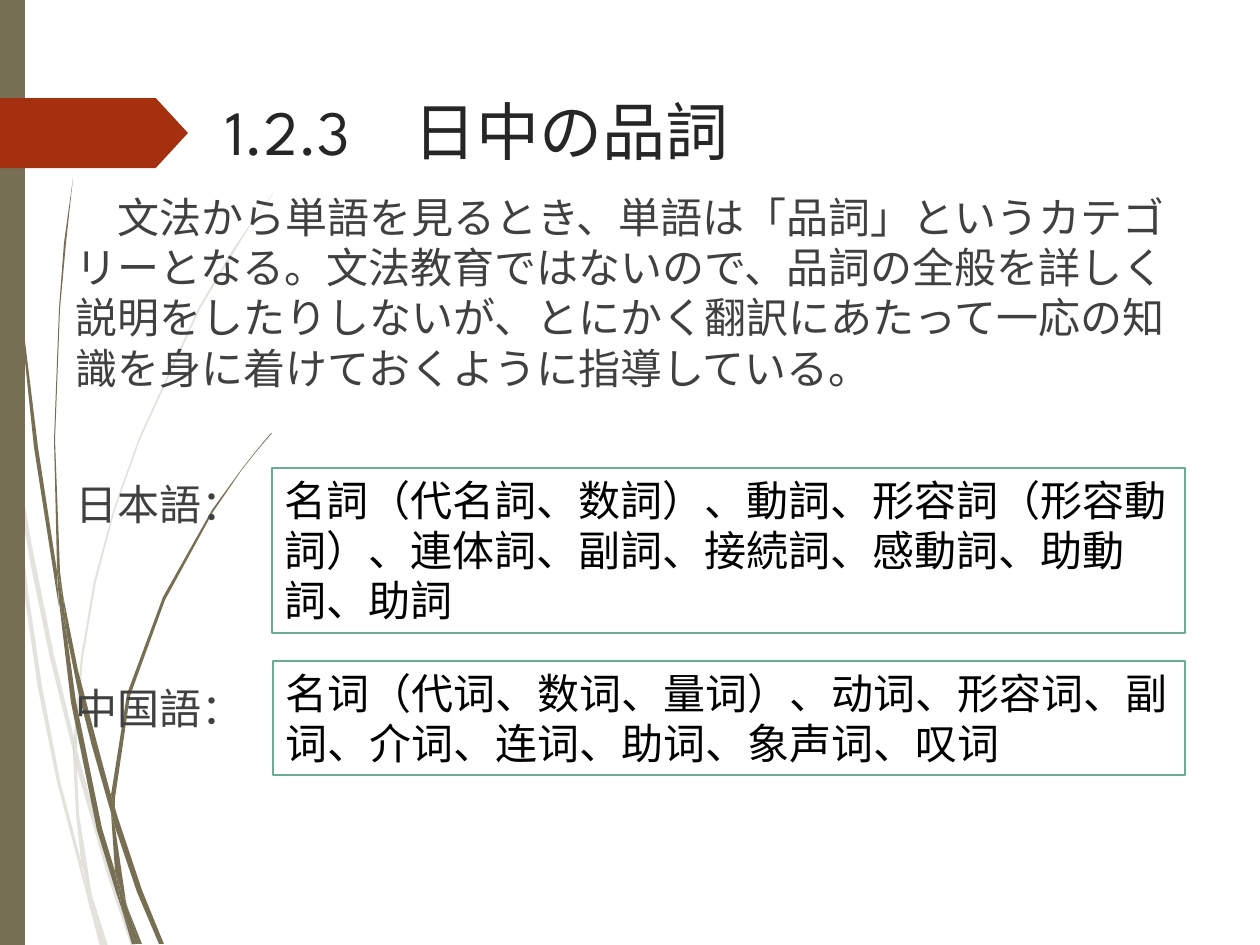
import dataclasses

import lxml.etree
import pptx
import pptx.dml.color
import pptx.enum.shapes
import pptx.enum.text
import pptx.oxml.ns
import pptx.util

PX = 914400 // 126
SHAPES = pptx.enum.shapes.MSO_SHAPE
ANCHOR = pptx.enum.text.MSO_ANCHOR
qn = pptx.oxml.ns.qn


@dataclasses.dataclass(frozen=True)
class Theme:
    font: str = "League Spartan"
    title_size: int = 36
    text_size: int = 24
    olive: str = "766F54"
    red: str = "A53010"
    green: str = "6AAC91"
    white: str = "FFFFFF"
    black: str = "000000"
    title_ink: str = "262626"
    body_ink: str = "404040"


theme = Theme()
rgb = pptx.dml.color.RGBColor.from_string


def write_text(shape, *paragraphs, size=theme.text_size, color=theme.black, anchor=ANCHOR.TOP):
    """Fill a shape with (text, space before in points) paragraphs."""
    frame = shape.text_frame
    frame.word_wrap = True
    frame.auto_size = pptx.enum.text.MSO_AUTO_SIZE.NONE
    frame.vertical_anchor = anchor
    for index, (text, space_before) in enumerate(paragraphs):
        paragraph = frame.add_paragraph() if index else frame.paragraphs[0]
        paragraph.alignment = pptx.enum.text.PP_ALIGN.LEFT
        paragraph.space_before = pptx.util.Pt(space_before)
        paragraph._p.get_or_add_pPr().set("hangingPunct", "0")
        run = paragraph.add_run()
        run.text = text
        run.font.name = theme.font
        run.font.size = pptx.util.Pt(size)
        run.font.color.rgb = rgb(color)
        east_asian = lxml.etree.SubElement(run.font._element, qn("a:ea"))
        east_asian.set("typeface", theme.font)


presentation = pptx.Presentation()
presentation.slide_width = pptx.util.Inches(10)
presentation.slide_height = pptx.util.Inches(7.5)
slide = presentation.slides.add_slide(presentation.slide_layouts[5])

# Grass blades, each outlined by its corners: pale ones behind, dark ones in front
pale_blades = [
    [(10, 441), (8, 406), (0, 355), (0, 377), (9, 433)],
    [(50, 658), (74, 755), (74, 738), (54, 655), (32, 546), (13, 435), (15, 474), (31, 566)],
    [(81, 765), (77, 751), (77, 769), (107, 874), (131, 946), (136, 946), (111, 872)],
    [(105, 946), (108, 946), (92, 896)],
    [(81, 861), (60, 780), (42, 686), (28, 591), (15, 474), (10, 441), (24, 592), (38, 688),
     (57, 782), (81, 873), (88, 900), (87, 891)],
    [(73, 755), (76, 814), (81, 861), (84, 872), (92, 896), (91, 890), (79, 814), (77, 769),
     (77, 766)],
    [(77, 736), (83, 658), (96, 582), (115, 510), (140, 440), (200, 309), (236, 249),
     (253, 221), (273, 194), (273, 193), (253, 220), (234, 248), (199, 307), (139, 438),
     (114, 508), (94, 581), (81, 657), (74, 736), (74, 738), (77, 751)],
    [(88, 900), (100, 946), (103, 946)],
    [(77, 766), (77, 769), (77, 751), (74, 738), (73, 755)],
    [(84, 872), (82, 861), (87, 891), (88, 900), (103, 946), (105, 946), (92, 896)],
]
dark_blades = [
    [(6, 139), (18, 294), (34, 447), (58, 601), (59, 606), (57, 576), (57, 571), (38, 447),
     (19, 292), (8, 137), (5, 60), (4, 0), (3, 0), (4, 60)],
    [(92, 746), (111, 813), (111, 798), (111, 795), (97, 743), (78, 670), (63, 595),
     (67, 636), (78, 691)],
    [(118, 818), (115, 808), (115, 827), (137, 892), (159, 944), (164, 944), (142, 890)],
    [(115, 871), (102, 828), (76, 701), (67, 636), (59, 601), (71, 702), (97, 830),
     (116, 892), (122, 910), (121, 903)],
    [(63, 595), (60, 571), (55, 440), (60, 309), (66, 243), (73, 178), (64, 243), (59, 309),
     (54, 440), (57, 566), (62, 595)],
    [(139, 944), (142, 944), (127, 906)],
    [(59, 601), (67, 636), (63, 595), (62, 595), (57, 566), (57, 571)],
    [(115, 798), (130, 696), (165, 600), (213, 512), (241, 471), (256, 452), (272, 433),
     (271, 433), (256, 451), (241, 470), (212, 510), (163, 597), (127, 694), (111, 795),
     (115, 808)],
    [(122, 910), (132, 944), (136, 944)],
    [(111, 813), (115, 871), (121, 890), (127, 906), (126, 902), (115, 827), (113, 820)],
    [(111, 813), (113, 820), (115, 827), (115, 808), (111, 795), (111, 798)],
    [(121, 890), (115, 871), (121, 903), (122, 910), (136, 944), (139, 944), (127, 906)],
]
for blades, opacity in ((pale_blades, 20), (dark_blades, 100)):
    for corners in blades:
        builder = slide.shapes.build_freeform(*corners[0], scale=PX)
        builder.add_line_segments(corners[1:], close=True)
        blade = builder.convert_to_shape()
        blade.shadow.inherit = False
        blade.fill.solid()
        blade.fill.fore_color.rgb = rgb(theme.olive)
        blade.line.fill.background()
        if opacity < 100:
            fill_color = blade._element.spPr.find(qn("a:solidFill"))[0]
            lxml.etree.SubElement(fill_color, qn("a:alpha")).set("val", str(opacity * 1000))

# Side bar, page arrow and the two word-class boxes
blocks = {}
for name, preset, box, fill, line in (
    ("side bar", SHAPES.RECTANGLE, (0, 0, 25, 945), theme.olive, None),
    ("page arrow", SHAPES.PENTAGON, (0, 98, 188, 70), theme.red, None),
    ("japanese", SHAPES.RECTANGLE, (272, 468, 913, 165), theme.white, theme.green),
    ("chinese", SHAPES.RECTANGLE, (273, 661, 912, 114), theme.white, theme.green),
):
    block = slide.shapes.add_shape(preset, *(value * PX for value in box))
    block.shadow.inherit = False
    block.fill.solid()
    block.fill.fore_color.rgb = rgb(fill)
    if line:
        block.line.color.rgb = rgb(line)
        block.line.width = pptx.util.Pt(1.25)
    else:
        block.line.fill.background()
    blocks[name] = block
blocks["page arrow"].adjustments[0] = 0.46

title = slide.shapes.title
title.left, title.top, title.width, title.height = (v * PX for v in (213, 86, 963, 88))
write_text(title, ("1.2.3　日中の品詞", 0), size=theme.title_size, color=theme.title_ink)

body = slide.shapes.add_textbox(*(value * PX for value in (63, 185, 1134, 659)))
write_text(
    body,
    ("　文法から単語を見るとき、単語は「品詞」というカテゴリーとなる。文法教育ではないので、"
     "品詞の全般を詳しく説明をしたりしないが、とにかく翻訳にあたって一応の知識を身に着けて"
     "おくように指導している。", 0),
    ("日本語：", 49),
    ("中国語：", 88),
    color=theme.body_ink,
)

write_text(
    blocks["japanese"],
    ("名詞（代名詞、数詞）、動詞、形容詞（形容動詞）、連体詞、副詞、接続詞、感動詞、助動詞、助詞", 0),
)
write_text(
    blocks["chinese"],
    ("名词（代词、数词、量词）、动词、形容词、副词、介词、连词、助词、象声词、叹词", 0),
    anchor=ANCHOR.MIDDLE,
)

presentation.save("out.pptx")
